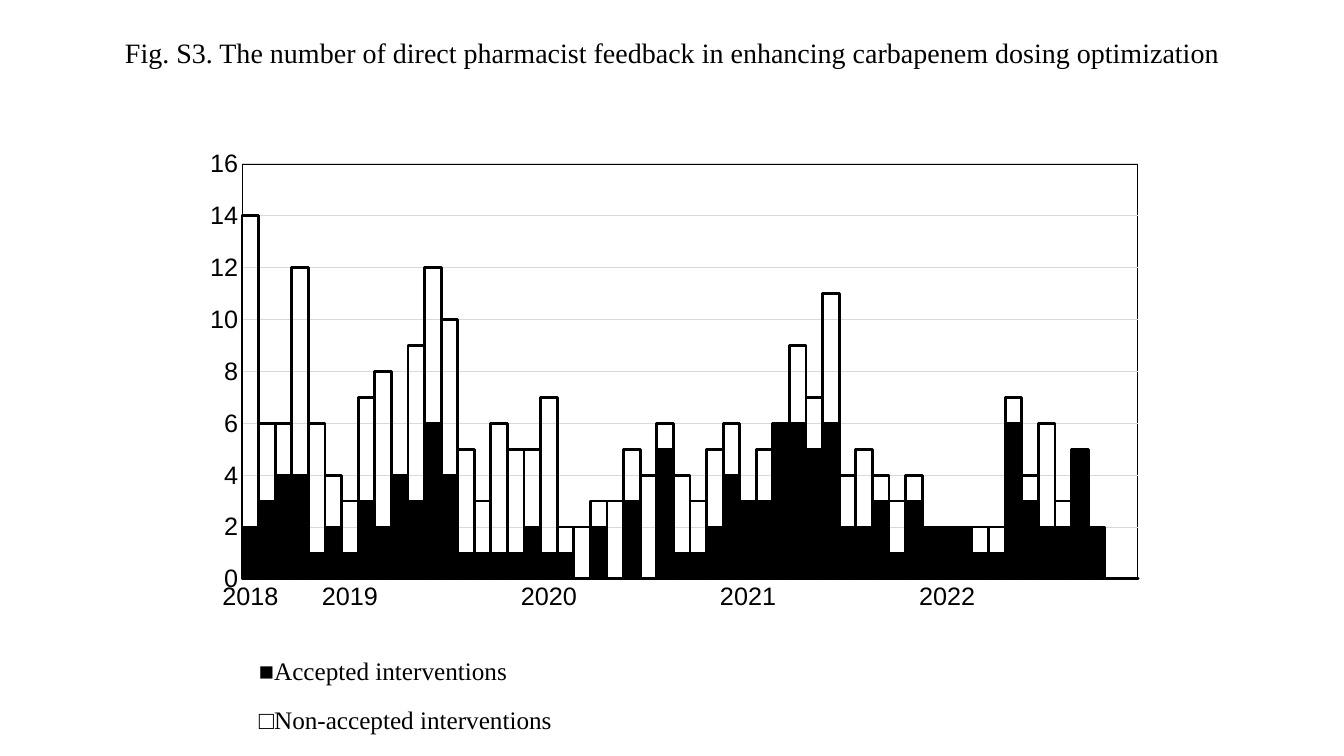
from lxml import etree
from pptx import Presentation
from pptx.chart.data import CategoryChartData
from pptx.dml.color import RGBColor
from pptx.enum.chart import XL_CHART_TYPE as ChartType, XL_TICK_MARK as TickMark
from pptx.enum.text import MSO_AUTO_SIZE as AutoSize
from pptx.oxml import parse_xml
from pptx.oxml.ns import nsdecls, qn
from pptx.util import Emu, Pt

BLACK = RGBColor(0x00, 0x00, 0x00)
GRID_GREY = RGBColor(0xD9, 0xD9, 0xD9)
SERIF, SANS, CHART_FONT = "Times New Roman", "Arial", "Noto Sans CJK JP"

# text, (left, top, width, height) in px, size in points
CAPTIONS = [
    ("■Accepted interventions", (249, 650, 328, 40), 18),
    ("□Non-accepted interventions", (249, 699, 377, 40), 18),
    ("Fig. S3. The number of direct pharmacist feedback in enhancing "
     "carbapenem dosing optimization", (115, 31, 1159, 44), 20),
]

MONTHS_SHOWN = {"2018": 6, "2019": 12, "2020": 12, "2021": 12, "2022": 12}
ACCEPTED = [
    2, 3, 4, 4, 1, 2,
    1, 3, 2, 4, 3, 6, 4, 1, 1, 1, 1, 2,
    1, 1, 0, 2, 0, 3, 0, 5, 1, 1, 2, 4,
    3, 3, 6, 6, 5, 6, 2, 2, 3, 1, 3, 2,
    2, 2, 1, 1, 6, 3, 2, 2, 5, 2, 0, 0,
]
NON_ACCEPTED = [
    12, 3, 2, 8, 5, 2,
    2, 4, 6, 0, 6, 6, 6, 4, 2, 5, 4, 3,
    6, 1, 2, 1, 3, 2, 4, 1, 3, 2, 3, 2,
    0, 2, 0, 3, 2, 5, 2, 3, 1, 2, 1, 0,
    0, 0, 1, 1, 1, 1, 4, 1, 0, 0, 0, 0,
]
CHART_BOX = (192, 140, 966, 481)
PLOT_BOX = (242, 164, 896, 415)

PX = 914400 / 100.8


def px(*lengths):
    return [Emu(round(length * PX)) for length in lengths]


def add_caption(slide, text, box, size):
    frame = slide.shapes.add_textbox(*px(*box)).text_frame
    frame.word_wrap = True
    frame.auto_size = AutoSize.SHAPE_TO_FIT_TEXT
    run = frame.paragraphs[0].add_run()
    run.text = text
    run.font.name, run.font.size = SERIF, Pt(size)
    run.font.color.rgb = BLACK


def set_line(line, color, width):
    line.color.rgb = color
    line.width = Pt(width)


def set_font(font, name, size):
    font.name, font.size = name, Pt(size)
    font.color.rgb = BLACK


def style_axis(axis):
    axis.major_tick_mark = axis.minor_tick_mark = TickMark.NONE
    set_font(axis.tick_labels.font, SANS, 18)
    set_line(axis.format.line, BLACK, 0.75)


def frame_plot(chart):
    """Fix the inner plot area to PLOT_BOX and give it a black border."""
    left, top, width, height = CHART_BOX
    x, y, w, h = PLOT_BOX
    shares = {"x": (x - left) / width, "y": (y - top) / height,
              "w": w / width, "h": h / height}
    plot_area = chart._chartSpace.chart.plotArea
    for old in plot_area.findall(qn("c:layout")):
        plot_area.remove(old)
    layout = etree.Element(qn("c:layout"))
    manual = etree.SubElement(layout, qn("c:manualLayout"))
    settings = [("layoutTarget", "inner"), ("xMode", "edge"), ("yMode", "edge")]
    settings += [(key, f"{share:.4f}") for key, share in shares.items()]
    for tag, value in settings:
        etree.SubElement(manual, qn(f"c:{tag}")).set("val", value)
    plot_area.insert(0, layout)
    plot_area.append(parse_xml(
        f'<c:spPr {nsdecls("c", "a")}><a:noFill/><a:ln w="{Pt(0.75)}">'
        f'<a:solidFill><a:srgbClr val="{BLACK}"/></a:solidFill></a:ln></c:spPr>'))


def add_feedback_chart(slide):
    data = CategoryChartData()
    data.categories = [year if month == 0 else ""
                       for year, count in MONTHS_SHOWN.items()
                       for month in range(count)]
    data.add_series("Series 1", ACCEPTED)
    data.add_series("Series 2", NON_ACCEPTED)
    chart = slide.shapes.add_chart(
        ChartType.COLUMN_STACKED, *px(*CHART_BOX), data).chart
    chart.has_legend = chart.has_title = False
    set_font(chart.font, CHART_FONT, 10)

    bars = chart.plots[0]
    bars.gap_width, bars.overlap, bars.vary_by_categories = 0, 100, False
    accepted, non_accepted = bars.series
    accepted.format.fill.solid()
    accepted.format.fill.fore_color.rgb = BLACK
    non_accepted.format.fill.background()
    for series in bars.series:
        set_line(series.format.line, BLACK, 2)

    months, counts = chart.category_axis, chart.value_axis
    style_axis(months)
    style_axis(counts)
    months._element.txPr.bodyPr.set("rot", "-60000000")
    label_skip = etree.Element(qn("c:tickLblSkip"))
    label_skip.set("val", "1")
    months._element.find(qn("c:noMultiLvlLbl")).addprevious(label_skip)
    counts.minimum_scale, counts.maximum_scale, counts.major_unit = 0, 16, 2
    counts.has_major_gridlines = True
    set_line(counts.major_gridlines.format.line, GRID_GREY, 0.75)
    frame_plot(chart)


def main():
    deck = Presentation()
    deck.slide_width, deck.slide_height = px(1344, 756)
    slide = deck.slides.add_slide(deck.slide_layouts[6])
    add_feedback_chart(slide)
    for text, box, size in CAPTIONS:
        add_caption(slide, text, box, size)
    deck.save("out.pptx")


if __name__ == "__main__":
    main()
